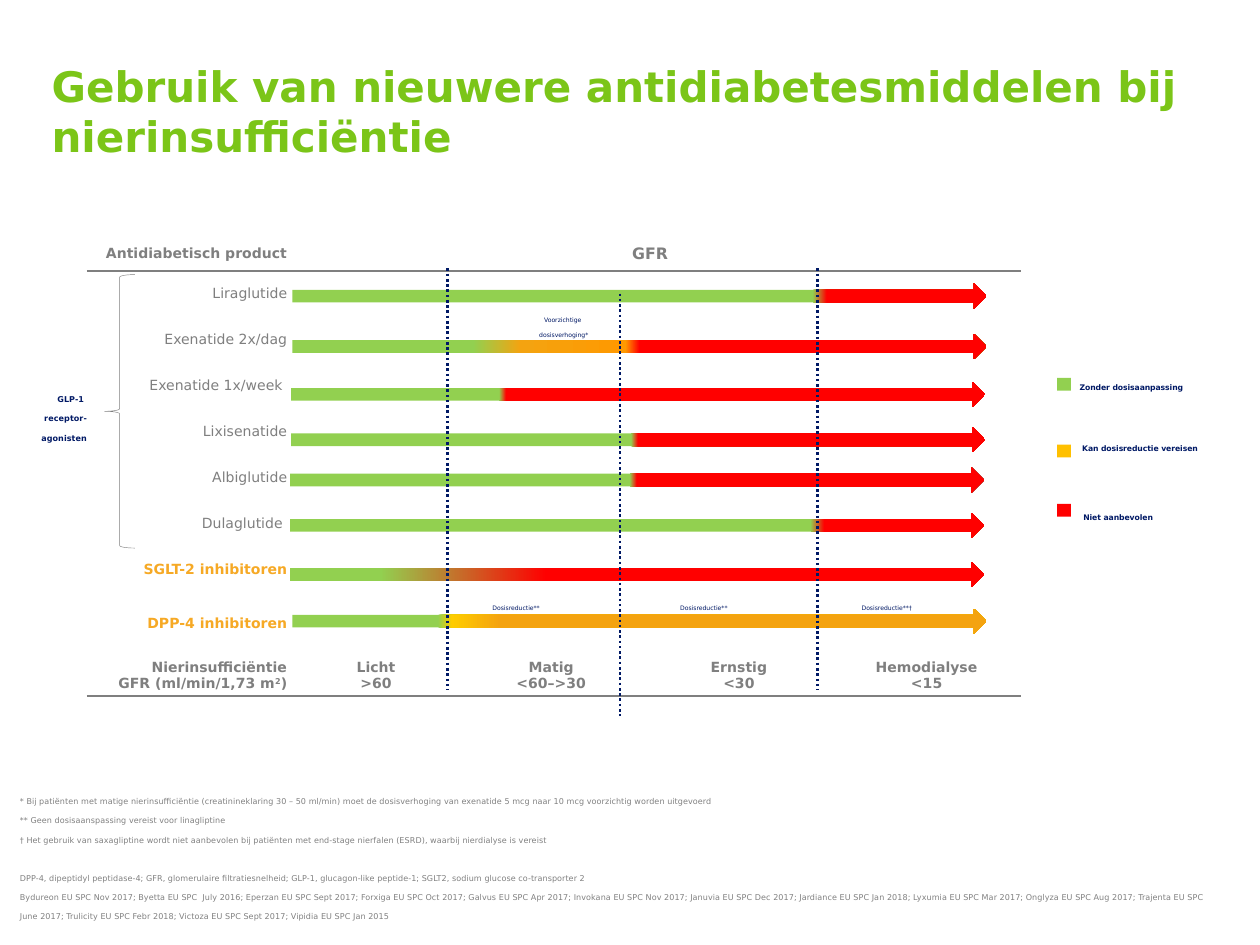
from lxml.etree import SubElement
from pptx import Presentation
from pptx.dml.color import RGBColor
from pptx.enum.dml import MSO_LINE
from pptx.enum.shapes import MSO_CONNECTOR, MSO_SHAPE
from pptx.enum.text import MSO_ANCHOR, PP_ALIGN
from pptx.oxml import parse_xml
from pptx.oxml.ns import nsdecls, qn
from pptx.util import Inches, Pt

FONT = "DejaVu Sans"
LIME = RGBColor(0x7B, 0xC5, 0x18)
GREY = RGBColor(0x7F, 0x7F, 0x7F)
NOTE_GREY = RGBColor(0x80, 0x80, 0x80)
NAVY = RGBColor(0x00, 0x19, 0x65)
AMBER = RGBColor(0xF6, 0xA9, 0x25)
GREEN = RGBColor(0x92, 0xD0, 0x50)
YELLOW = RGBColor(0xFF, 0xCC, 0x00)
GOLD = RGBColor(0xFF, 0xC0, 0x00)
ORANGE = RGBColor(0xF4, 0xA3, 0x10)
DEEP_ORANGE = RGBColor(0xFF, 0x99, 0x00)
RED = RGBColor(0xFF, 0x00, 0x00)
NO_STYLE = "{2D5ABB26-0587-4C30-8999-92F81FD0307C}"
LEFT, CENTER, RIGHT = PP_ALIGN.LEFT, PP_ALIGN.CENTER, PP_ALIGN.RIGHT
LOWERED, RAISED = -25000, 30000

TITLE = "Gebruik van nieuwere antidiabetesmiddelen bij nierinsufficiëntie"

HEADER = ["Antidiabetisch product", "", "G", "FR", ""]
# product, colour, bold, arrow left, arrow top, gradient stops in percent
PRODUCTS = [
    ("Liraglutide", GREY, False, 2.32, 2.25, [(75, GREEN), (77, RED)]),
    ("Exenatide 2x/dag", GREY, False, 2.32, 2.65,
     [(26, GREEN), (33, ORANGE), (48, DEEP_ORANGE), (50, RED)]),
    ("Exenatide 1x/week ", GREY, False, 2.31, 3.03, [(30, GREEN), (31, RED)]),
    ("Lixisenatide", GREY, False, 2.31, 3.39, [(49, GREEN), (50, RED)]),
    ("Albiglutide", GREY, False, 2.3, 3.71, [(49, GREEN), (50, RED)]),
    ("Dulaglutide ", GREY, False, 2.3, 4.07, [(75, GREEN), (77, RED)]),
    ("SGLT-2 inhibitoren", AMBER, True, 2.3, 4.46, [(13, GREEN), (37, RED)]),
    ("DPP-4 inhibitoren", AMBER, True, 2.32, 4.83,
     [(21, GREEN), (23, YELLOW), (30, ORANGE)]),
]
STAGES = [
    ["Nierinsufficiëntie", [("GFR (ml/min/1,73 m", 0), ("2", RAISED), (")", 0)]],
    ["Licht", ">60"],
    ["Matig", "<60–>30"],
    ["Ernstig", "<30"],
    ["Hemodialyse", "<15"],
]
COLUMN_WIDTHS = [1.65, 1.29, 1.49, 1.49, 1.49]
ROW_HEIGHTS = [0.27] + [2.92 / len(PRODUCTS)] * len(PRODUCTS) + [0.45]

THRESHOLDS = [(3.55, 2.13), (4.92, 2.33), (6.49, 2.13)]
THRESHOLD_LENGTH = 3.35

# swatch top, colour, label, label box
LEGEND = [
    (3.0, GREEN, "Zonder dosisaanpassing", (8.47, 2.92, 1.41, 0.35)),
    (3.53, GOLD, "Kan dosisreductie vereisen", (8.49, 3.4, 1.48, 0.35)),
    (4.0, RED, "Niet aanbevolen", (8.5, 3.95, 1.23, 0.23)),
]
DOSE_NOTES = [
    (["Voorzichtige ", "dosisverhoging*"], (4.03, 2.41, 0.89, 0.3), CENTER),
    (["Dosisreductie**"], (3.81, 4.69, 0.88, 0.2), LEFT),
    (["Dosisreductie**"], (5.3, 4.69, 0.88, 0.2), LEFT),
    (["Dosisreductie**†"], (6.74, 4.69, 0.93, 0.2), LEFT),
]
GLP1_GROUP = ["GLP-1 ", "receptor-", "agonisten"]
FOOTNOTES = [
    "* Bij patiënten met matige nierinsufficiëntie (creatinineklaring 30 – 50 ml/min) moet de "
    "dosisverhoging van exenatide 5 mcg naar 10 mcg voorzichtig worden uitgevoerd",
    "** Geen dosisaanspassing vereist voor linagliptine",
    "† Het gebruik van saxagliptine wordt niet aanbevolen bij patiënten met end-stage nierfalen "
    "(ESRD), waarbij nierdialyse is vereist",
    "DPP-4, dipeptidyl peptidase-4; GFR, glomerulaire filtratiesnelheid; GLP-1, glucagon-like "
    "peptide-1; SGLT2, sodium glucose co-transporter 2",
    "Bydureon EU SPC Nov 2017; Byetta EU SPC  July 2016; Eperzan EU SPC Sept 2017; Forxiga EU SPC "
    "Oct 2017; Galvus EU SPC Apr 2017; Invokana EU SPC Nov 2017; Januvia EU SPC Dec 2017; "
    "Jardiance EU SPC Jan 2018; Lyxumia EU SPC Mar 2017; Onglyza EU SPC Aug 2017; Trajenta EU SPC "
    "June 2017; Trulicity EU SPC Febr 2018; Victoza EU SPC Sept 2017; Vipidia EU SPC Jan 2015",
]
ABBREVIATIONS = 3  # index of the footnote that opens the second block


def write(frame, lines, size, color, bold=False, align=LEFT, baseline=0):
    """Fill a text frame; a line is a string or a list of (text, baseline) runs."""
    for index, line in enumerate(lines):
        paragraph = frame.paragraphs[0] if index == 0 else frame.add_paragraph()
        paragraph.alignment = align
        for text, shift in [(line, baseline)] if isinstance(line, str) else line:
            run = paragraph.add_run()
            run.text = text
            run.font.name, run.font.size, run.font.bold = FONT, Pt(size), bold
            run.font.color.rgb = color
            if shift:
                run.font._element.set("baseline", str(shift))


def add_text(slide, box, lines, size, color, **style):
    frame = slide.shapes.add_textbox(*map(Inches, box)).text_frame
    frame.word_wrap = True
    write(frame, lines, size, color, **style)
    return frame


def add_plain_shape(slide, kind, box):
    shape = slide.shapes.add_shape(kind, *map(Inches, box))
    shape.shadow.inherit = False
    shape.line.fill.background()
    return shape


def fill_cell(cell, lines, color=GREY, bold=True, align=RIGHT, size=8,
              side=0.06, top=0.03, underlined=False):
    cell.vertical_anchor = MSO_ANCHOR.MIDDLE
    cell.margin_left = cell.margin_right = Inches(side)
    cell.margin_top, cell.margin_bottom = Inches(top), Inches(0.03)
    cell.fill.background()
    if any(lines):
        write(cell.text_frame, lines, size, color, bold, align)
    else:
        cell.text_frame.paragraphs[0]._p.get_or_add_endParaRPr().set("sz", "800")
    if underlined:
        cell._tc.get_or_add_tcPr().insert(0, parse_xml(
            f'<a:lnB {nsdecls("a")} w="12700"><a:solidFill><a:srgbClr val="{GREY}"/>'
            '</a:solidFill></a:lnB>'))


def add_product_table(slide):
    table = slide.shapes.add_table(
        len(ROW_HEIGHTS), len(COLUMN_WIDTHS), Inches(0.69), Inches(1.88),
        Inches(sum(COLUMN_WIDTHS)), Inches(sum(ROW_HEIGHTS))).table
    table.first_row = table.horz_banding = False
    table._tbl.tblPr.find(qn("a:tableStyleId")).text = NO_STYLE
    for column, width in zip(table.columns, COLUMN_WIDTHS):
        column.width = Inches(width)
    for row, height in zip(table.rows, ROW_HEIGHTS):
        row.height = Inches(height)

    for col, heading in enumerate(HEADER):
        fill_cell(table.cell(0, col), [heading], size=9 if col else 8,
                  side=0 if col else 0.06, align=LEFT if heading == "FR" else RIGHT,
                  underlined=True)
    for row, (product, color, bold, *_) in enumerate(PRODUCTS, 1):
        top = 0.16 if row == len(PRODUCTS) else 0.03
        fill_cell(table.cell(row, 0), [product], color, bold, top=top)
        for col in range(1, len(COLUMN_WIDTHS)):
            fill_cell(table.cell(row, col), [])
    for col, stage in enumerate(STAGES):
        fill_cell(table.cell(len(PRODUCTS) + 1, col), stage, top=0.16,
                  align=CENTER if col else RIGHT, underlined=True)


def add_dose_arrow(slide, left, top, stops):
    arrow = add_plain_shape(slide, MSO_SHAPE.RIGHT_ARROW, (left, top, 5.51, 0.2))
    arrow.fill.gradient()
    arrow.fill.gradient_angle = 0
    stop_list = arrow._element.spPr.find(".//" + qn("a:gsLst"))
    for old_stop in list(stop_list):
        stop_list.remove(old_stop)
    for percent, color in stops:
        stop = SubElement(stop_list, qn("a:gs"), pos=str(percent * 1000))
        SubElement(stop, qn("a:srgbClr"), val=str(color))


def main():
    deck = Presentation()
    deck.slide_width, deck.slide_height = Inches(10), Inches(7.5)
    slide = deck.slides.add_slide(deck.slide_layouts[6])

    title = add_text(slide, (0.41, 0.48, 9.54, 0.8), [TITLE], 24, LIME, bold=True)
    title.margin_left = title.margin_right = title.margin_top = title.margin_bottom = 0

    add_product_table(slide)
    for *_, left, top, stops in PRODUCTS:
        add_dose_arrow(slide, left, top, stops)
    for x, top in THRESHOLDS:
        threshold = slide.shapes.add_connector(
            MSO_CONNECTOR.STRAIGHT, Inches(x), Inches(top),
            Inches(x), Inches(top + THRESHOLD_LENGTH))
        threshold.line.color.rgb = NAVY
        threshold.line.width = Pt(1.5)
        threshold.line.dash_style = MSO_LINE.ROUND_DOT
        SubElement(threshold._element.spPr, qn("a:effectLst"))

    for top, color, label, box in LEGEND:
        swatch = add_plain_shape(slide, MSO_SHAPE.RECTANGLE, (8.39, top, 0.11, 0.1))
        swatch.fill.solid()
        swatch.fill.fore_color.rgb = color
        add_text(slide, box, [label], 7.5, NAVY, bold=True, baseline=LOWERED)

    brace = add_plain_shape(slide, MSO_SHAPE.LEFT_BRACE, (0.83, 2.18, 0.24, 2.17))
    brace.fill.background()
    brace.line.color.rgb = GREY
    brace.line.width = Pt(0.25)
    add_text(slide, (-0.04, 3.01, 0.83, 0.5), GLP1_GROUP, 8, NAVY,
             bold=True, align=RIGHT, baseline=LOWERED)

    for lines, box, align in DOSE_NOTES:
        add_text(slide, box, lines, 6, NAVY, align=align, baseline=LOWERED)
    notes = add_text(slide, (0.06, 6.2, 9.76, 1.18), FOOTNOTES, 8, NOTE_GREY, baseline=LOWERED)
    notes.paragraphs[ABBREVIATIONS].space_before = Pt(11)

    deck.save("out.pptx")


if __name__ == "__main__":
    main()
